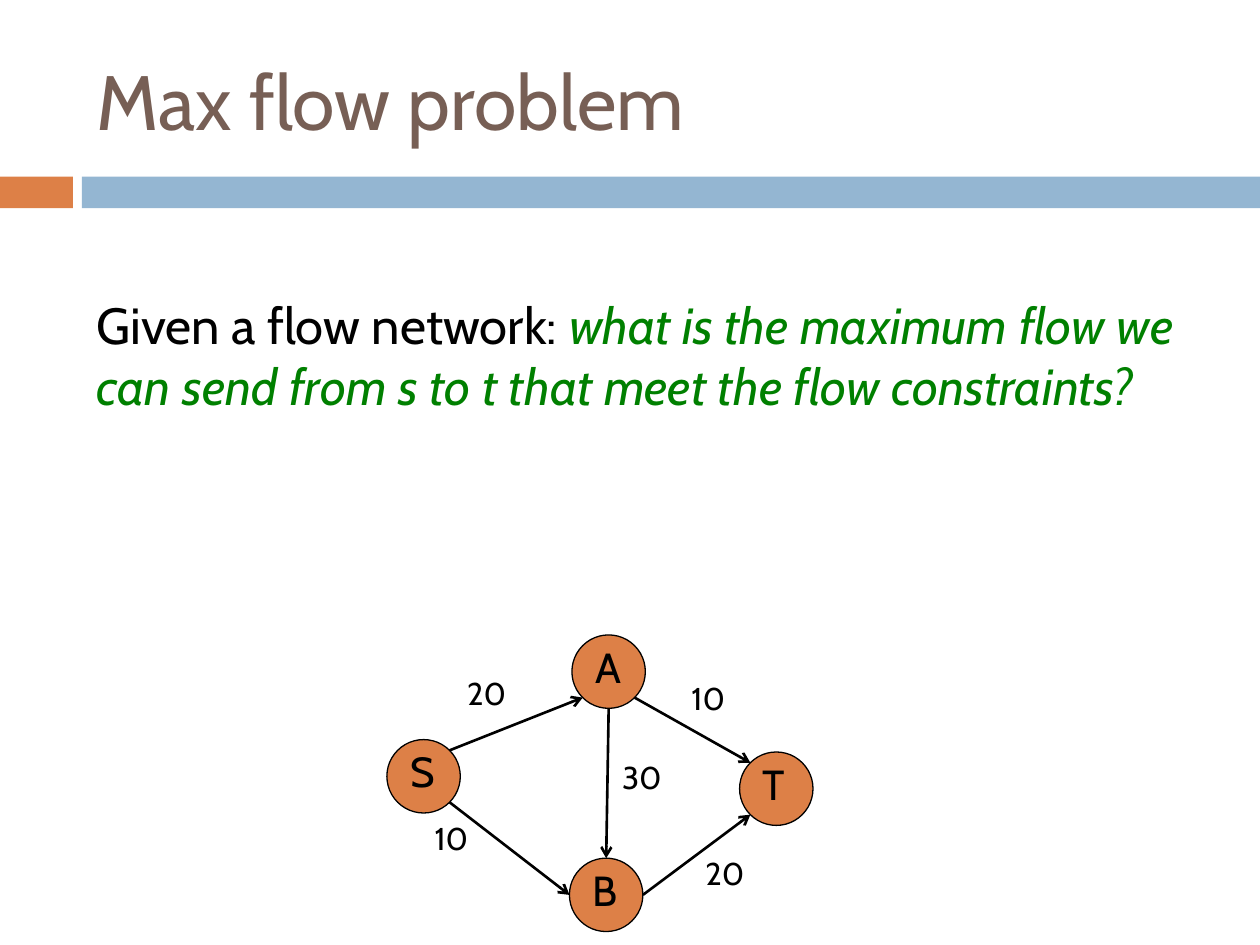
from dataclasses import dataclass

from lxml import etree
from pptx import Presentation
from pptx import util as u
from pptx.dml.color import RGBColor
from pptx.enum import shapes, text
from pptx.oxml import ns


@dataclass(frozen=True)
class Theme:
    font: str = "Cabin"
    orange: str = "DD8047"
    blue: str = "94B6D2"
    brown: str = "775F55"
    green: str = "008000"
    black: str = "000000"
    title: int = 44
    body: int = 29
    node: int = 24
    capacity: int = 18
    outline: float = 0.75
    edge: float = 1.5


class FlowSlide:
    diameter = 1.48
    near, far = 0.146, 0.854
    sites = {
        "top": (0.5, 0), "bottom": (0.5, 1), "left": (0, 0.5), "right": (1, 0.5),
        "top left": (near, near), "top right": (far, near),
        "bottom left": (near, far), "bottom right": (far, far),
    }

    def __init__(self, s, theme):
        self.s = s
        self.theme = theme
        self.nodes = {}

    def shape(self, kind, x, y, w, h, fill):
        sp = self.s.shapes.add_shape(kind, u.Cm(x), u.Cm(y), u.Cm(w), u.Cm(h))
        sp.shadow.inherit = False
        sp.fill.solid()
        sp.fill.fore_color.rgb = RGBColor.from_string(fill)
        sp.line.fill.background()
        return sp

    def bar(self, x, w, fill):
        self.shape(shapes.MSO_SHAPE.RECTANGLE, x, 3.56, w, 0.64, fill)

    def text(self, x, y, w, h, words, size, color, anchor=text.MSO_ANCHOR.TOP):
        sp = self.s.shapes.add_textbox(u.Cm(x), u.Cm(y), u.Cm(w), u.Cm(h))
        tf = sp.text_frame
        tf.text = words
        tf.word_wrap = True
        tf.vertical_anchor = anchor
        p = tf.paragraphs[0]
        self.style(p.runs[0], size, color)
        return p

    def style(self, r, size, color, italic=False):
        r.font.name = self.theme.font
        r.font.size = u.Pt(size)
        r.font.italic = italic
        r.font.color.rgb = RGBColor.from_string(color)

    def title(self, words):
        self.text(1.7, 0.64, 22.66, 2.74, words, self.theme.title,
                  self.theme.brown, text.MSO_ANCHOR.MIDDLE)

    def body(self, lead, question):
        p = self.text(1.7, 5.79, 22.66, 6.17, lead, self.theme.body, self.theme.black)
        p.space_before = u.Pt(7)
        r = p.add_run()
        r.text = question
        self.style(r, self.theme.body, self.theme.green, italic=True)

    def node(self, name, x, y):
        self.nodes[name] = (x, y)
        sp = self.shape(shapes.MSO_SHAPE.OVAL, x, y, self.diameter, self.diameter,
                        self.theme.orange)
        sp.line.color.rgb = RGBColor.from_string(self.theme.black)
        sp.line.width = u.Pt(self.theme.outline)
        self.text(x + 0.22, y, 1.27, 1.27, name, self.theme.node, self.theme.black)

    def site(self, name, side):
        return [u.Cm(start + self.diameter * part)
                for start, part in zip(self.nodes[name], self.sites[side])]

    def edge(self, tail, tail_side, head, head_side):
        c = self.s.shapes.add_connector(
            shapes.MSO_CONNECTOR.STRAIGHT,
            *self.site(tail, tail_side), *self.site(head, head_side))
        c.line.color.rgb = RGBColor.from_string(self.theme.black)
        c.line.width = u.Pt(self.theme.edge)
        etree.SubElement(c.line._get_or_add_ln(), ns.qn("a:tailEnd"), type="arrow")
        etree.SubElement(c._element.spPr, ns.qn("a:effectLst"))

    def capacity(self, value, x, y):
        self.text(x, y, 1.9, 1.02, str(value), self.theme.capacity, self.theme.black)


def main():
    prs = Presentation()
    prs.slide_width, prs.slide_height = u.Cm(25.4), u.Cm(19.05)
    theme = Theme()
    flow = FlowSlide(prs.slides.add_slide(prs.slide_layouts[6]), theme)

    flow.bar(0, 1.47, theme.orange)
    flow.bar(1.65, 23.75, theme.blue)
    flow.title("Max flow problem")
    flow.body("Given a flow network: ",
              "what is the maximum flow we can send from s to t "
              "that meet the flow constraints?")

    for node in [("S", 7.8, 14.91), ("A", 11.53, 12.8),
                 ("B", 11.48, 17.3), ("T", 14.91, 15.16)]:
        flow.node(*node)

    for edge in [("S", "top right", "A", "bottom left"),
                 ("S", "bottom right", "B", "left"),
                 ("B", "right", "T", "bottom left"),
                 ("A", "bottom", "B", "top"),
                 ("A", "bottom right", "T", "top left")]:
        flow.edge(*edge)

    for capacity in [(20, 9.17, 13.46), (20, 13.97, 17.09), (10, 8.51, 16.38),
                     (10, 13.69, 13.56), (30, 12.29, 15.16)]:
        flow.capacity(*capacity)

    prs.save("out.pptx")


if __name__ == "__main__":
    main()
